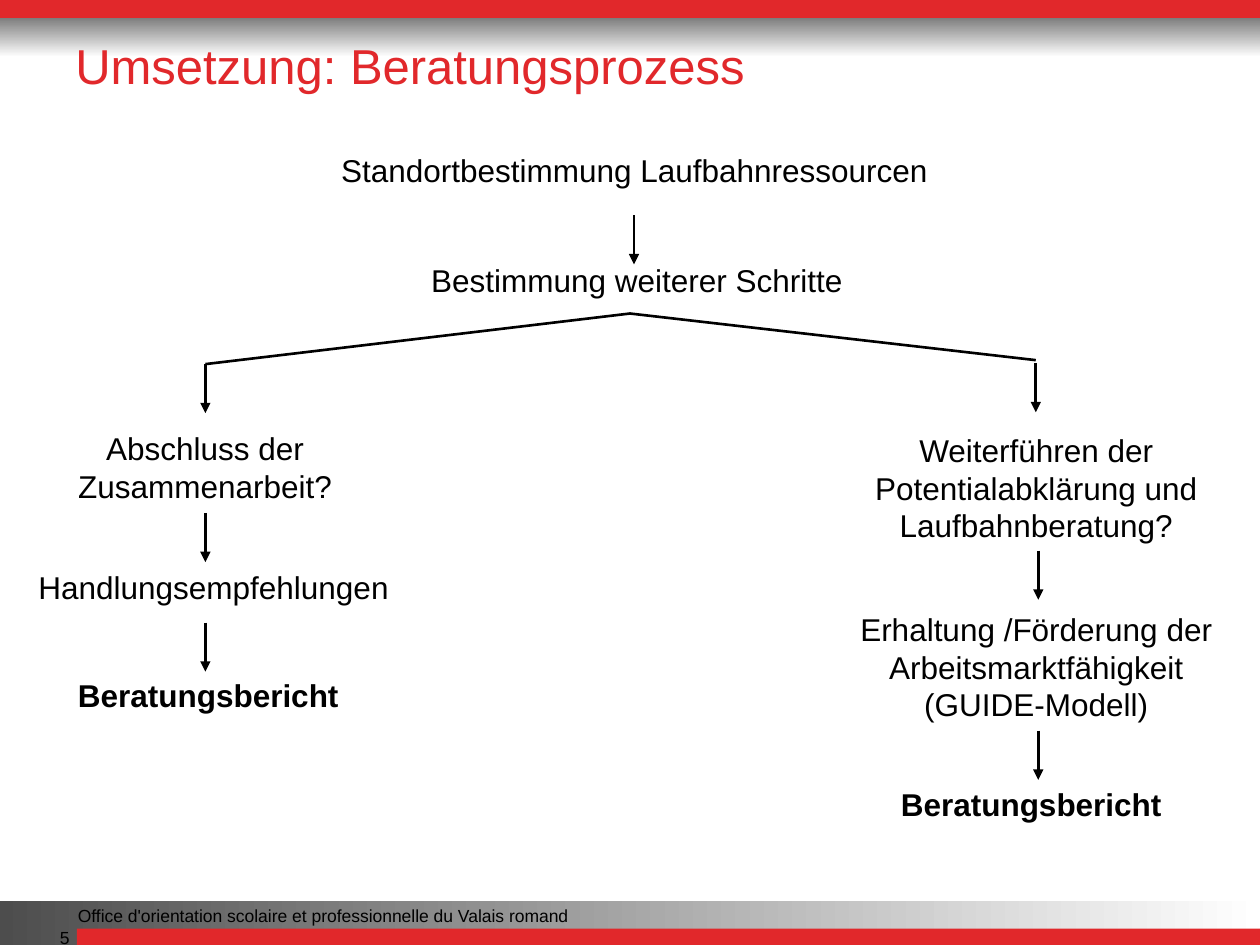
from typing import NamedTuple

from pptx import Presentation
from pptx.dml.color import RGBColor
from pptx.enum.shapes import MSO_CONNECTOR as Link, MSO_SHAPE as Kind
from pptx.enum.text import MSO_ANCHOR as Anchor, PP_ALIGN as Align
from pptx.oxml.ns import qn
from pptx.util import Cm, Pt
from lxml.etree import SubElement

RED, BLACK, WHITE = "E1282B", "000000", "FFFFFF"
DROP = 0.99


class Box(NamedTuple):
    left: float
    top: float
    width: float
    height: float


class Band(NamedTuple):
    box: Box
    start: str
    end: str = ""
    angle: int = 0


class Label(NamedTuple):
    text: str
    box: Box
    size: int = 18
    bold: bool = False
    color: str = BLACK
    align: Align = Align.CENTER
    anchor: Anchor = Anchor.TOP


class Spot(NamedTuple):
    x: float
    y: float


BANDS = [
    Band(Box(0, 0.18, 25.43, 0.97), "5F5F5F", WHITE, 270),
    Band(Box(0, 0, 25.43, 0.36), RED),
    Band(Box(-0.03, 18.16, 25.43, 0.89), "4D4D4D", WHITE),
    Band(Box(1.55, 18.72, 23.85, 0.36), RED),
]

LABELS = [
    Label("Umsetzung: Beratungsprozess", Box(1.27, 0.58, 23.44, 1.45),
          28, color=RED, align=Align.LEFT, anchor=Anchor.MIDDLE),
    Label("Office d'orientation scolaire et professionnelle du Valais romand",
          Box(1.32, 18.11, 19.96, 0.81), 10, align=Align.LEFT),
    Label("5", Box(0.46, 18.57, 1.19, 0.69), 10, align=Align.RIGHT),
    Label("Standortbestimmung Laufbahnressourcen", Box(3.28, 2.92, 19.02, 1.02)),
    Label("Bestimmung weiterer Schritte", Box(3.63, 5.13, 18.42, 1.02)),
    Label("Abschluss der Zusammenarbeit?", Box(1.24, 8.53, 5.79, 1.8)),
    Label("Handlungsempfehlungen", Box(0.51, 11.33, 7.59, 1.02)),
    Label("Beratungsbericht", Box(0.91, 13.51, 6.58, 1.02), bold=True),
    Label("Weiterführen der Potentialabklärung und Laufbahnberatung?",
          Box(17.07, 8.56, 7.64, 2.57)),
    Label("Erhaltung /Förderung der Arbeitsmarktfähigkeit (GUIDE-Modell)",
          Box(17.07, 12.17, 7.64, 2.57)),
    Label("Beratungsbericht", Box(17.5, 15.7, 6.58, 1.02), bold=True),
]

FORK = Spot(12.7, 6.32)
ENDS = [Spot(4.14, 7.34), Spot(20.88, 7.26)]
DROPS = [
    Spot(12.78, 4.34),
    Spot(4.14, 7.34), Spot(4.14, 10.34), Spot(4.14, 12.55),
    Spot(20.88, 7.32), Spot(20.93, 11.1), Spot(20.93, 14.73),
]


def tint(code: str) -> RGBColor:
    return RGBColor.from_string(code)


def add_band(slide, band: Band) -> None:
    shape = slide.shapes.add_shape(Kind.RECTANGLE, *map(Cm, band.box))
    shape.shadow.inherit = False
    shape.line.fill.background()
    if not band.end:
        shape.fill.solid()
        shape.fill.fore_color.rgb = tint(band.start)
        return
    shape.fill.gradient()
    shape.fill.gradient_angle = band.angle
    for stop, code in zip(shape.fill.gradient_stops, (band.start, band.end)):
        stop.color.rgb = tint(code)


def add_label(slide, label: Label) -> None:
    frame = slide.shapes.add_textbox(*map(Cm, label.box)).text_frame
    frame.word_wrap = True
    frame.vertical_anchor = label.anchor
    par = frame.paragraphs[0]
    par.text = label.text
    par.alignment = label.align
    font = par.font
    font.name = "Arial"
    font.size = Pt(label.size)
    font.bold = label.bold
    font.color.rgb = tint(label.color)


def add_line(slide, start: Spot, end: Spot, arrow: bool = False) -> None:
    link = slide.shapes.add_connector(Link.STRAIGHT, *map(Cm, start + end))
    link.line.color.rgb = tint(BLACK)
    link.line.width = Pt(1.5)
    if arrow:
        SubElement(link.line._get_or_add_ln(), qn("a:tailEnd"), type="triangle")
    SubElement(link._element.spPr, qn("a:effectLst"))


def main() -> None:
    deck = Presentation()
    deck.slide_width, deck.slide_height = Cm(25.4), Cm(19.05)
    slide = deck.slides.add_slide(deck.slide_layouts[6])
    for band in BANDS:
        add_band(slide, band)
    for label in LABELS:
        add_label(slide, label)
    for end in ENDS:
        add_line(slide, FORK, end)
    for spot in DROPS:
        add_line(slide, spot, Spot(spot.x, spot.y + DROP), arrow=True)
    deck.save("out.pptx")


if __name__ == "__main__":
    main()
